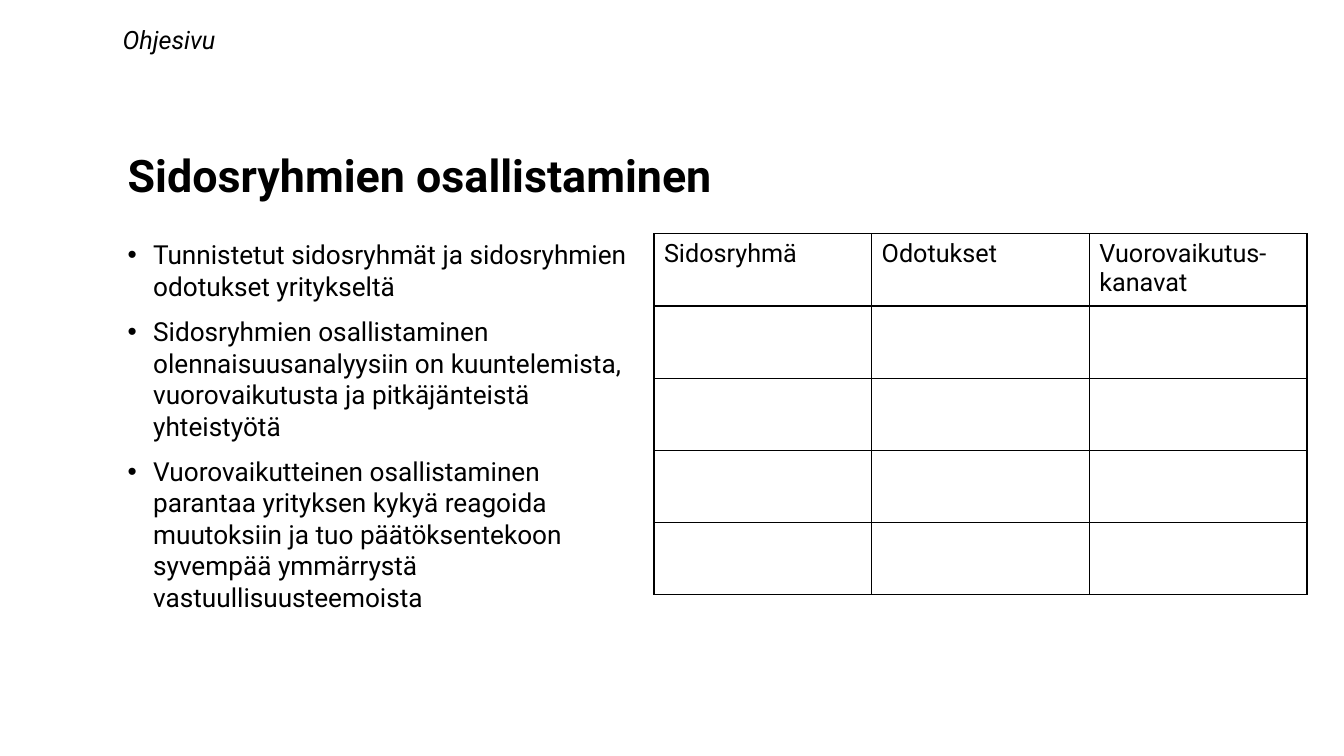
import pptx
import pptx.dml.color
import pptx.enum.text
import pptx.oxml.ns
import pptx.util
from dataclasses import dataclass
from lxml import etree

Cm, Pt = pptx.util.Cm, pptx.util.Pt
Anchor = pptx.enum.text.MSO_ANCHOR


@dataclass(frozen=True)
class Theme:
    ink: str = "000000"
    font: str = "Roboto"
    title: float = 32
    body: float = 18.7
    small: float = 18
    border: float = 1


theme = Theme()


def write(p, text, **font):
    """Fill a paragraph with one run in the theme font."""
    r = p.add_run()
    r.text = text
    for name, value in {"name": theme.font, **font}.items():
        setattr(r.font, name, value)
    r.font.color.rgb = pptx.dml.color.RGBColor.from_string(theme.ink)


def add_xml(parent, tag, **attributes):
    return etree.SubElement(parent, pptx.oxml.ns.qn(tag), attributes)


prs = pptx.Presentation()
prs.slide_width, prs.slide_height = Cm(33.87), Cm(19.05)
s = prs.slides.add_slide(prs.slide_layouts[6])

# Title
tf = s.shapes.add_textbox(Cm(2.97), Cm(2.59), Cm(28.04), Cm(2.64)).text_frame
tf.word_wrap = True
tf.vertical_anchor = Anchor.BOTTOM
tf.paragraphs[0].line_spacing = 0.9
write(tf.paragraphs[0], "Sidosryhmien osallistaminen", size=Pt(theme.title), bold=True)

# Bullet list
bullets = [
    "Tunnistetut sidosryhmät ja sidosryhmien odotukset yritykseltä",
    "Sidosryhmien osallistaminen olennaisuusanalyysiin on kuuntelemista, "
    "vuorovaikutusta ja pitkäjänteistä yhteistyötä",
    "Vuorovaikutteinen osallistaminen parantaa yrityksen kykyä reagoida muutoksiin "
    "ja tuo päätöksentekoon syvempää ymmärrystä vastuullisuusteemoista",
]
tf = s.shapes.add_textbox(Cm(2.97), Cm(5.89), Cm(13.26), Cm(10.44)).text_frame
tf.word_wrap = True
indent = Cm(0.64)
for i, text in enumerate(bullets):
    p = tf.add_paragraph() if i else tf.paragraphs[0]
    p.space_before = Pt(10 if i else 0)
    pPr = p._p.get_or_add_pPr()
    pPr.set("marL", str(indent))
    pPr.set("indent", str(-indent))
    add_xml(pPr, "a:buFont", typeface="Arial")
    add_xml(pPr, "a:buChar", char="•")
    write(p, text, size=Pt(theme.body))

# Stakeholder table: a header row above empty rows to fill in
headers = ["Sidosryhmä", "Odotukset", "Vuorovaikutus-kanavat"]
row_count = 5
table = s.shapes.add_table(row_count, len(headers), Cm(16.48), Cm(5.89),
                           Cm(16.46), Cm(9.1)).table
table.first_row = table.horz_banding = False
for row in table.rows:
    row.height = Cm(1.82)
for cell in table.iter_cells():
    tcPr = cell._tc.get_or_add_tcPr()
    for side in ("L", "R", "T", "B"):
        ln = add_xml(tcPr, f"a:ln{side}", w=str(Pt(theme.border)))
        add_xml(add_xml(ln, "a:solidFill"), "a:srgbClr", val=theme.ink)
    cell.fill.background()
for cell, text in zip(table.rows[0].cells, headers):
    write(cell.text_frame.paragraphs[0], text, size=Pt(theme.small))

# Page label
tf = s.shapes.add_textbox(Cm(2.84), Cm(0.48), Cm(3.18), Cm(1.02)).text_frame
tf.word_wrap = False
tf.auto_size = pptx.enum.text.MSO_AUTO_SIZE.SHAPE_TO_FIT_TEXT
write(tf.paragraphs[0], "Ohjesivu", size=Pt(theme.small), italic=True)

prs.save("out.pptx")
